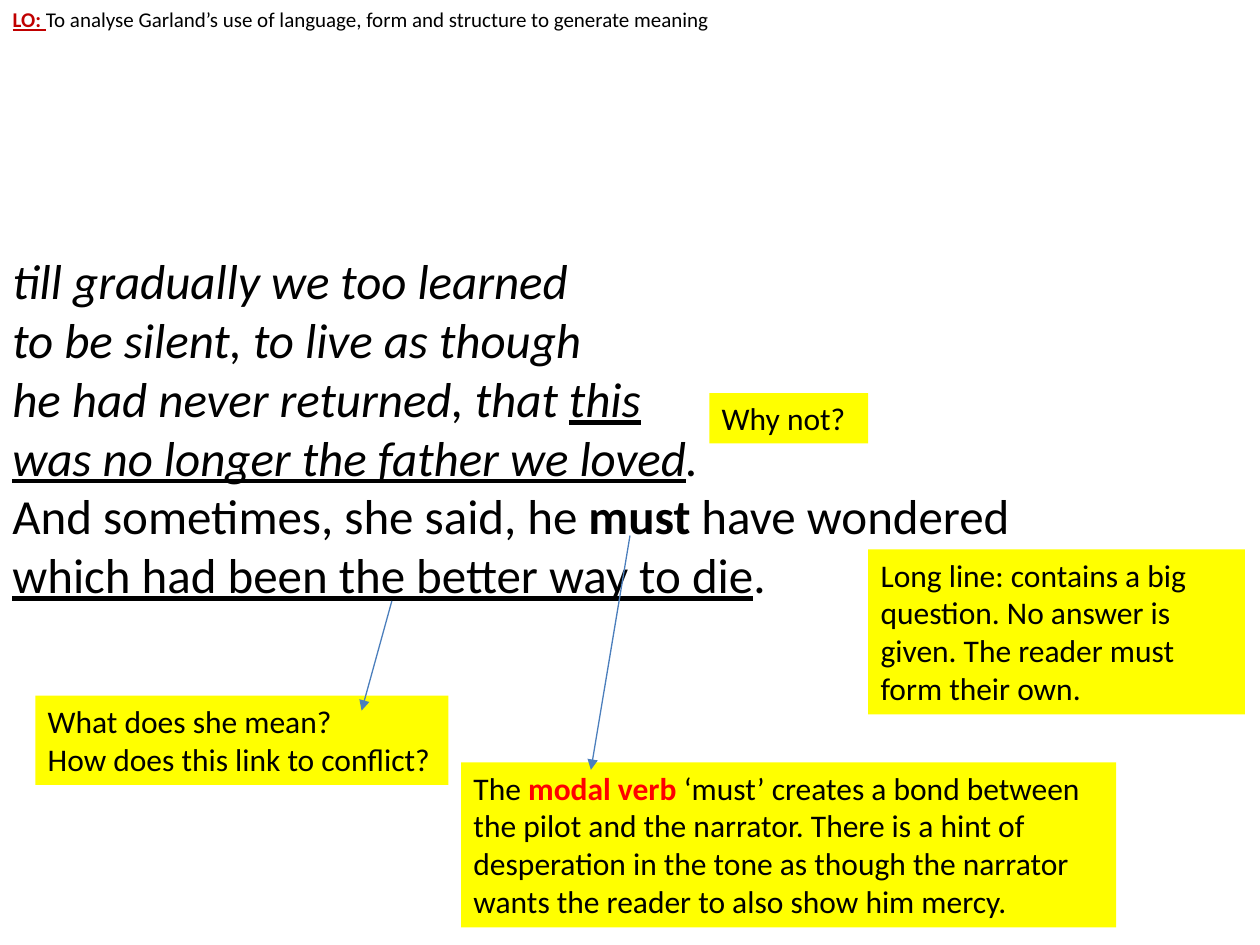
"""Build an annotated poem slide with a learning objective and four notes."""
from lxml.etree import SubElement
from pptx import Presentation
from pptx.dml.color import RGBColor as RGB
from pptx.enum.shapes import MSO_CONNECTOR as LINK
from pptx.enum.text import MSO_ANCHOR as ANCHOR, MSO_AUTO_SIZE as FIT, PP_ALIGN as ALIGN
from pptx.oxml.ns import qn
from pptx.util import Inches, Pt

BLACK = RGB(0, 0, 0)
WHITE = RGB(255, 255, 255)
YELLOW = RGB(255, 255, 0)
RED = RGB(255, 0, 0)
CRIMSON = RGB(192, 0, 0)
BLUE = RGB(75, 126, 188)

deck = Presentation()
deck.slide_width, deck.slide_height = Inches(10), Inches(7.5)
slide = deck.slides.add_slide(deck.slide_layouts[5])
shapes = slide.shapes


def style(box, place, fill, wrap=True):
    box.left, box.top, box.width, box.height = map(Inches, place)
    box.fill.solid()
    box.fill.fore_color.rgb = fill
    frame = box.text_frame
    frame.word_wrap = wrap
    frame.auto_size = FIT.SHAPE_TO_FIT_TEXT
    frame.vertical_anchor = ANCHOR.TOP
    frame.margin_left = frame.margin_right = Inches(0.1)
    frame.margin_top = frame.margin_bottom = Inches(0.05)
    if fill == WHITE:
        color = box.fill._xPr.find(qn("a:solidFill"))[0]
        SubElement(color, qn("a:alpha"), val="88000")
    return frame


def write(para, size, parts):
    para.alignment = ALIGN.LEFT
    for text, marks, color in parts:
        for row, line in enumerate(text.split("\n")):
            if row:
                para.add_line_break()
            if line:
                run = para.add_run()
                run.text = line
                font = run.font
                font.name, font.size = "Calibri", Pt(size)
                font.color.rgb = color
                font.bold, font.italic, font.underline = ("b" in marks, "i" in marks, "u" in marks)


goal = style(shapes.title, (0, 0, 10, 0.3), WHITE).paragraphs[0]
write(goal, 12, [
    ("LO: ", "bu", CRIMSON),
    ("To analyse Garland’s use of language, form and structure to generate meaning", "", BLACK),
])
props = goal._p.get_or_add_pPr()
props.set("marL", str(Inches(0.31)))
props.set("indent", str(-Inches(0.31)))

poem = style(shapes.add_textbox(0, 0, 0, 0), (0, 1.94, 10, 2.93), WHITE)
write(poem.paragraphs[0], 28, [
    ("till gradually we too learned\nto be silent, to live as though\n"
     "he had never returned, that ", "i", BLACK),
    ("this\nwas no longer the father we loved", "iu", BLACK),
    (".\n", "i", BLACK),
    ("And sometimes, she said, he ", "", BLACK),
    ("must", "b", BLACK),
    (" have wondered\n", "", BLACK),
    ("which had been the better way to die", "u", BLACK),
    (".", "", BLACK),
])

notes = [
    ((5.63, 3.12, 1.26, 0.4), True, [[("Why not?", "", BLACK)]]),
    ((3.66, 6.05, 5.2, 1.31), True, [[
        ("The ", "", BLACK),
        ("modal verb ", "b", RED),
        ("‘must’ creates a bond between the pilot and the narrator. There is a hint of "
         "desperation in the tone as though the narrator wants the reader to also show "
         "him mercy.", "", BLACK),
    ]]),
    ((0.28, 5.52, 3.28, 0.71), False, [
        [("What does she mean?", "", BLACK)],
        [("How does this link to conflict?", "", BLACK)],
    ]),
    ((6.89, 4.36, 2.99, 1.31), True, [[
        ("Long line: contains a big question. No answer is given. The reader must form "
         "their own.", "", BLACK),
    ]]),
]
for place, wrap, paras in notes:
    frame = style(shapes.add_textbox(0, 0, 0, 0), place, YELLOW, wrap)
    for row, parts in enumerate(paras):
        para = frame.add_paragraph() if row else frame.paragraphs[0]
        write(para, 18, parts)

for ends in [(5, 4.25, 4.69, 6.11), (3.11, 4.77, 2.87, 5.64)]:
    arrow = shapes.add_connector(LINK.STRAIGHT, *map(Inches, ends))
    arrow.line.color.rgb = BLUE
    arrow.line.width = Pt(0.75)
    SubElement(arrow.line._get_or_add_ln(), qn("a:tailEnd"), type="triangle")
    SubElement(arrow._element.spPr, qn("a:effectLst"))

deck.save("out.pptx")
